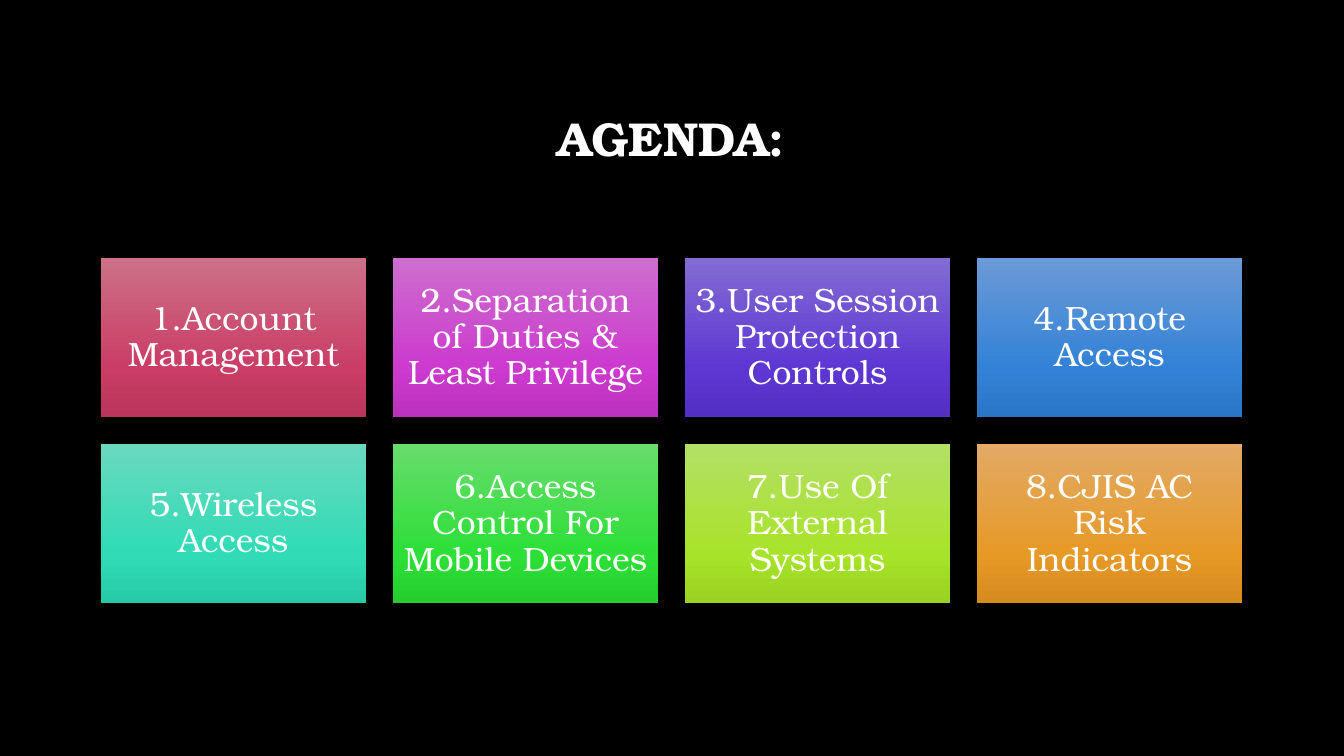
from copy import deepcopy

from pptx import Presentation
from pptx import util as u
from pptx.dml.color import RGBColor
from pptx.enum import shapes, text

COLORS = {"background": "000000", "text": "FFFFFF"}

TOPICS = [
    ("1.Account Management", ("CC7087", "CA3D66", "BA355B")),
    ("2.Separation of Duties & Least Privilege", ("CD6ECF", "CC3ACE", "BB32BE")),
    ("3.User Session Protection Controls", ("826CD3", "5E37D3", "532FC2")),
    ("4.Remote Access", ("6B9AD6", "3382D7", "2B76C6")),
    ("5.Wireless Access", ("6AD9BF", "30DBB6", "28CAA7")),
    ("6.Access Control For Mobile Devices", ("68DC6D", "2DDF37", "25CE2E")),
    ("7.Use Of External Systems", ("B4DF67", "A7E329", "99D222")),
    ("8.CJIS AC Risk Indicators", ("E2AA66", "E79926", "D68B1F")),
]


def write(frame, content, size, bold=False, inset=0.1):
    frame.word_wrap = True
    frame.auto_size = text.MSO_AUTO_SIZE.NONE
    frame.vertical_anchor = text.MSO_ANCHOR.MIDDLE
    frame.margin_left = frame.margin_right = u.Inches(inset)
    frame.margin_top = frame.margin_bottom = u.Inches(inset)
    paragraph = frame.paragraphs[0]
    paragraph.alignment = text.PP_ALIGN.CENTER
    paragraph.line_spacing = 0.9
    paragraph.space_before = u.Pt(0)
    run = paragraph.add_run()
    run.text = content
    run.font.name = "TeX Gyre Bonum"
    run.font.size = u.Pt(size)
    run.font.bold = bold
    run.font.color.rgb = RGBColor.from_string(COLORS["text"])


class AgendaSlide:
    left, top, width = 1, 2.56, 11.32
    columns = 4
    tile_width, tile_height = 2.63, 1.58
    gap = (width - columns * tile_width) / (columns - 1)
    stops = (0, 0.69, 1)

    def __init__(self, deck):
        self.slide = deck.slides.add_slide(deck.slide_layouts[5])
        backdrop = self.slide.background.fill
        backdrop.solid()
        backdrop.fore_color.rgb = RGBColor.from_string(COLORS["background"])

    def title(self, content):
        heading = self.slide.shapes.title
        heading.left, heading.top = u.Inches(self.left), u.Inches(0.67)
        heading.width, heading.height = u.Inches(self.width), u.Inches(1.45)
        write(heading.text_frame, content, size=34, bold=True)

    def tile(self, column, row, content, shades):
        topic = self.slide.shapes.add_shape(
            shapes.MSO_SHAPE.RECTANGLE,
            u.Inches(self.left + column * (self.tile_width + self.gap)),
            u.Inches(self.top + row * (self.tile_height + self.gap)),
            u.Inches(self.tile_width),
            u.Inches(self.tile_height),
        )
        topic.shadow.inherit = False
        topic.line.fill.background()
        self.shade(topic, shades)
        write(topic.text_frame, content, size=24)

    def shade(self, topic, shades):
        topic.fill.gradient()
        topic.fill.gradient_angle = 270
        stop_list = topic.element.xpath(".//a:gsLst")[0]
        stop_list.append(deepcopy(stop_list[-1]))
        for stop, position, shade in zip(topic.fill.gradient_stops, self.stops, shades):
            stop.position = position
            stop.color.rgb = RGBColor.from_string(shade)


def main():
    deck = Presentation()
    deck.slide_width, deck.slide_height = u.Inches(13.33), u.Inches(7.5)
    agenda = AgendaSlide(deck)
    agenda.title("AGENDA:")
    for index, (topic, shades) in enumerate(TOPICS):
        row, column = divmod(index, agenda.columns)
        agenda.tile(column, row, topic, shades)
    deck.save("out.pptx")


if __name__ == "__main__":
    main()
